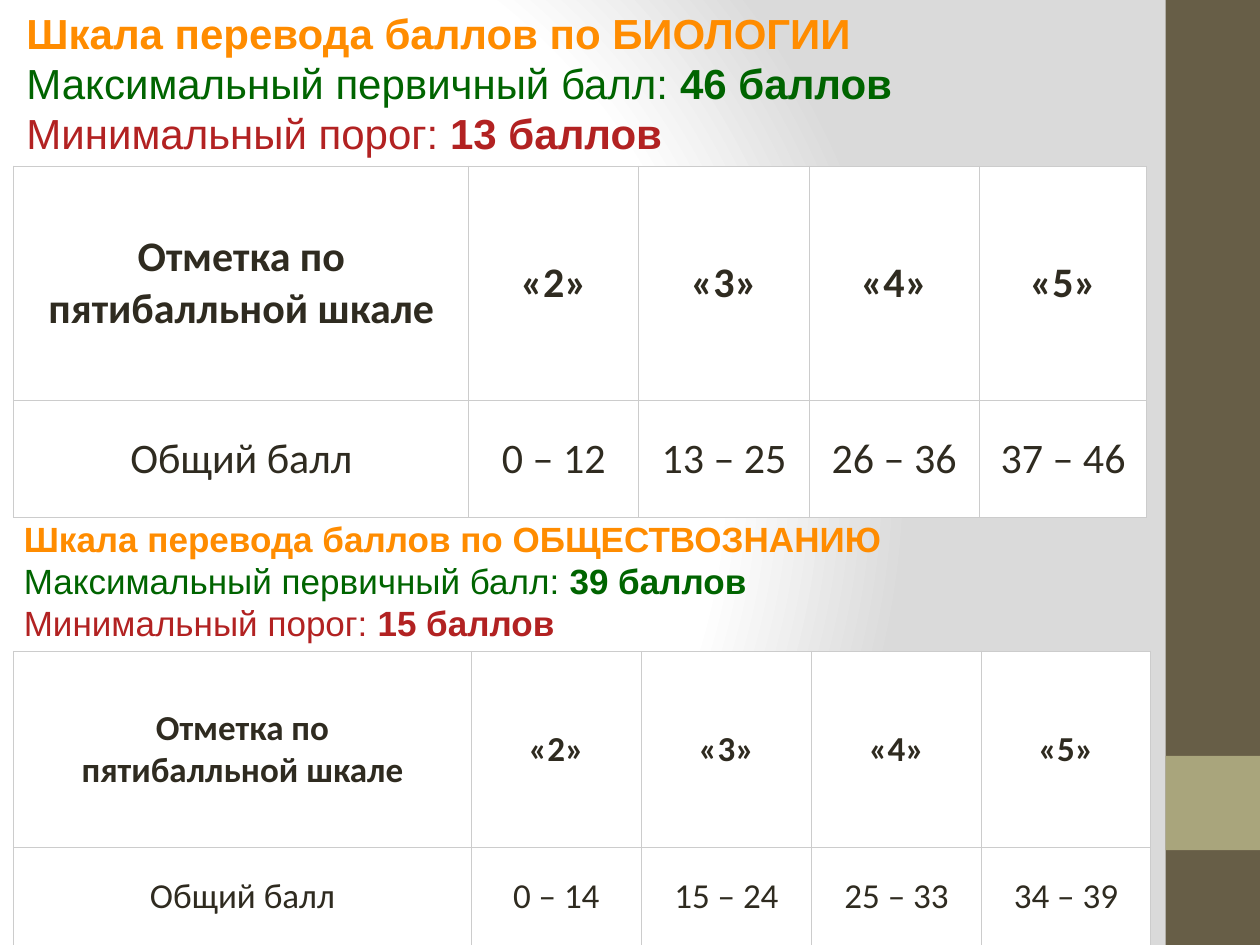
import dataclasses

import pptx
import pptx.dml.color
import pptx.enum.shapes
import pptx.enum.text
import pptx.oxml
import pptx.oxml.ns
import pptx.util

Cm, Pt = pptx.util.Cm, pptx.util.Pt
RGBColor = pptx.dml.color.RGBColor
PP_ALIGN = pptx.enum.text.PP_ALIGN
MSO_ANCHOR = pptx.enum.text.MSO_ANCHOR

ORANGE = RGBColor(0xFF, 0x8C, 0x00)
GREEN = RGBColor(0x00, 0x64, 0x00)
RED = RGBColor(0xB2, 0x22, 0x22)
INK = RGBColor(0x2F, 0x2B, 0x20)
WHITE = RGBColor(0xFF, 0xFF, 0xFF)
GRID = RGBColor(0xCC, 0xCC, 0xCC)
BROWN = RGBColor(0x67, 0x5E, 0x47)
OLIVE = RGBColor(0xA9, 0xA5, 0x7C)
BACK_EDGE = RGBColor(0xDA, 0xDA, 0xDA)

NS = pptx.oxml.ns.nsdecls("a", "p")
MARKS = ["«2»", "«3»", "«4»", "«5»"]
LABEL = "Отметка по\nпятибалльной шкале"


@dataclasses.dataclass
class Scale:
    """One subject: its heading and its table of marks (lengths in cm)."""
    subject: str
    maximum: str
    minimum: str
    ranges: list[str]
    size: int
    heading_box: tuple[float, float, float, float]
    anchor: MSO_ANCHOR
    inset_top: float
    table_top: float
    cols: list[float]
    rows: list[float]


SCALES = [
    Scale("БИОЛОГИИ", "46 баллов", "13 баллов",
          ["0 – 12", "13 – 25", "26 – 36", "37 – 46"], 24,
          (0.28, 0, 21.01, 3.33), MSO_ANCHOR.MIDDLE, 0.13,
          3.35, [9.17, 3.43, 3.43, 3.43, 3.38], [4.72, 2.36]),
    Scale("ОБЩЕСТВОЗНАНИЮ", "39 баллов", "15 баллов",
          ["0 – 14", "15 – 24", "25 – 33", "34 – 39"], 20,
          (0.23, 10.21, 22.96, 4.37), MSO_ANCHOR.TOP, 0.22,
          13.13, [9.22, 3.43, 3.43, 3.43, 3.4], [3.96, 1.98]),
]


def set_background(s) -> None:
    stops = "".join(
        f'<a:gs pos="{pos * 1000}"><a:srgbClr val="{color}"/></a:gs>'
        for pos, color in [(0, WHITE), (75, WHITE), (100, BACK_EDGE)])
    bg = pptx.oxml.parse_xml(
        f'<p:bg {NS}><p:bgPr><a:gradFill rotWithShape="1"><a:gsLst>{stops}</a:gsLst>'
        '<a:path path="circle"><a:fillToRect l="20000" t="50000" r="100000" b="50000"/>'
        '</a:path></a:gradFill><a:effectLst/></p:bgPr></p:bg>')
    s._element.cSld.insert(0, bg)


def add_band(s, top: float, height: float, color: RGBColor) -> None:
    sp = s.shapes.add_shape(pptx.enum.shapes.MSO_SHAPE.RECTANGLE,
                            Cm(23.5), Cm(top), Cm(1.9), Cm(height))
    sp.shadow.inherit = False
    sp.fill.solid()
    sp.fill.fore_color.rgb = color
    sp.line.fill.background()


def add_run(p, text: str, font: str, size: int, color: RGBColor, bold: bool) -> None:
    r = p.add_run()
    r.text = text
    for name, value in {"name": font, "size": Pt(size), "bold": bold}.items():
        setattr(r.font, name, value)
    r.font.color.rgb = color


def fill_heading(sp, scale: Scale) -> None:
    for name, value in zip(("left", "top", "width", "height"), scale.heading_box):
        setattr(sp, name, Cm(value))
    tf = sp.text_frame
    settings = {"word_wrap": True, "vertical_anchor": scale.anchor,
                "auto_size": pptx.enum.text.MSO_AUTO_SIZE.NONE,
                "margin_top": Cm(scale.inset_top)}
    for name, value in settings.items():
        setattr(tf, name, value)
    lines = [
        (ORANGE, [(f"Шкала перевода баллов по {scale.subject}", True)]),
        (GREEN, [("Максимальный первичный балл: ", False), (scale.maximum, True)]),
        (RED, [("Минимальный порог: ", False), (scale.minimum, True)]),
    ]
    for i, (color, runs) in enumerate(lines):
        p = tf.add_paragraph() if i else tf.paragraphs[0]
        p.alignment = PP_ALIGN.LEFT
        for text, bold in runs:
            add_run(p, text, "Arial", scale.size, color, bold)


def set_borders(cell) -> None:
    tc_pr = cell._tc.get_or_add_tcPr()
    for side in "LRTB":
        tc_pr.append(pptx.oxml.parse_xml(
            f'<a:ln{side} {NS} w="{Pt(0.75)}"><a:solidFill><a:srgbClr val="{GRID}"/>'
            f'</a:solidFill></a:ln{side}>'))


def fill_cell(cell, text: str, size: int, bold: bool) -> None:
    set_borders(cell)
    cell.fill.solid()
    cell.fill.fore_color.rgb = WHITE
    cell.vertical_anchor = MSO_ANCHOR.MIDDLE
    for side in ("left", "right", "top", "bottom"):
        setattr(cell, f"margin_{side}", 0)
    tf = cell.text_frame
    for i, line in enumerate(text.split("\n")):
        p = tf.add_paragraph() if i else tf.paragraphs[0]
        p.alignment = PP_ALIGN.CENTER
        add_run(p, line, "Calibri", size, INK, bold)


def add_marks_table(s, scale: Scale) -> None:
    table = s.shapes.add_table(
        len(scale.rows), len(scale.cols), Cm(0.28), Cm(scale.table_top),
        Cm(sum(scale.cols)), Cm(sum(scale.rows))).table
    for col, width in zip(table.columns, scale.cols):
        col.width = Cm(width)
    for row, height in zip(table.rows, scale.rows):
        row.height = Cm(height)
    content = [[LABEL, *MARKS], ["Общий балл", *scale.ranges]]
    for i, texts in enumerate(content):
        for j, text in enumerate(texts):
            fill_cell(table.cell(i, j), text, scale.size, bold=i == 0)


def main() -> None:
    prs = pptx.Presentation()
    prs.slide_width, prs.slide_height = Cm(25.4), Cm(19.05)
    s = prs.slides.add_slide(prs.slide_layouts.get_by_name("Title Only"))
    set_background(s)
    add_band(s, 0, 19.05, BROWN)
    add_band(s, 15.24, 1.9, OLIVE)
    for i, scale in enumerate(SCALES):
        add_marks_table(s, scale)
        sp = s.shapes.add_textbox(0, 0, 0, 0) if i else s.shapes.title
        fill_heading(sp, scale)
    prs.save("out.pptx")


if __name__ == "__main__":
    main()
